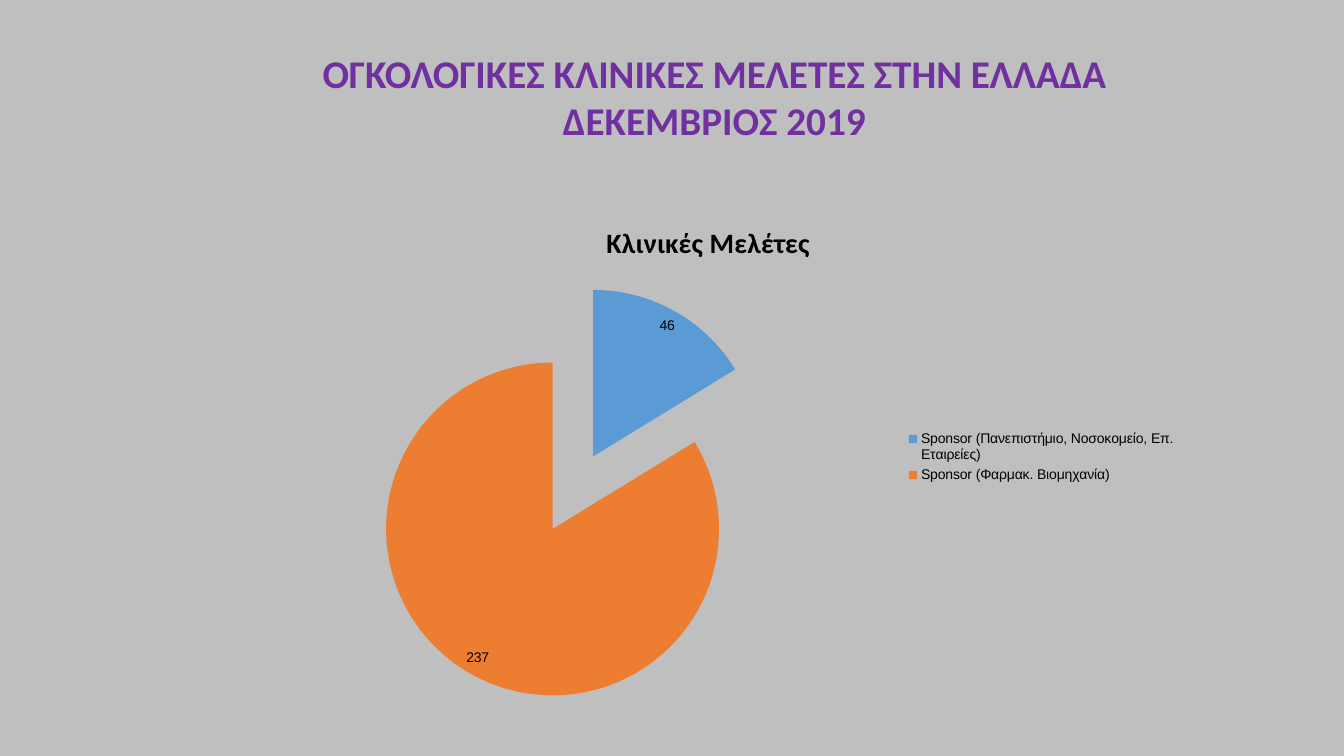
from dataclasses import dataclass

from lxml import etree
from pptx import Presentation
from pptx.chart.data import CategoryChartData
from pptx.dml.color import RGBColor
from pptx.enum import chart as chart_enum, text
from pptx.oxml import ns
from pptx.util import Inches, Pt


@dataclass(frozen=True)
class Theme:
    background: str = "BFBFBF"
    heading: str = "7030A0"
    ink: str = "000000"
    heading_font: str = "Calibri"
    chart_font: str = "Arial"
    heading_size: int = 28
    chart_title_size: int = 20
    label_size: int = 10


@dataclass(frozen=True)
class Sponsor:
    name: str
    studies: int
    color: str


@dataclass(frozen=True)
class Area:
    """A part of the chart, in fractions of the chart's size."""
    x: float
    y: float
    w: float | None = None
    h: float | None = None


THEME = Theme()
HEADING = ("ΟΓΚΟΛΟΓΙΚΕΣ ΚΛΙΝΙΚΕΣ ΜΕΛΕΤΕΣ ΣΤΗΝ ΕΛΛΑΔΑ", "ΔΕΚΕΜΒΡΙΟΣ 2019")
CHART_TITLE = "Κλινικές Μελέτες"
EXPLOSION = 25
SPONSORS = (
    Sponsor("Sponsor (Πανεπιστήμιο, Νοσοκομείο, Επ. Εταιρείες)", 46, "5B9BD5"),
    Sponsor("Sponsor (Φαρμακ. Βιομηχανία)", 237, "ED7D31"),
)


def format_font(font, name: str, size: int, color: str, bold: bool = False) -> None:
    for key, value in {"name": name, "size": Pt(size), "bold": bold}.items():
        setattr(font, key, value)
    font.color.rgb = RGBColor.from_string(color)


def place_part(part, area: Area, index: int, inner: bool = False) -> None:
    """Give a chart part a manual layout as its child at the index."""
    for old in part.findall(ns.qn("c:layout")):
        part.remove(old)
    layout = etree.Element(ns.qn("c:layout"))
    manual = etree.SubElement(layout, ns.qn("c:manualLayout"))
    settings = {"layoutTarget": "inner"} if inner else {}
    settings |= {"xMode": "edge", "yMode": "edge", "x": area.x, "y": area.y}
    settings |= {"w": area.w, "h": area.h}
    for tag, value in settings.items():
        if value is not None:
            etree.SubElement(manual, ns.qn(f"c:{tag}")).set("val", str(value))
    part.insert(index, layout)


def add_heading(page) -> None:
    box = page.shapes.title
    place = {"left": 3.1, "top": 0.44, "width": 7.97, "height": 1.03}
    for key, value in place.items():
        setattr(box, key, Inches(value))
    frame = box.text_frame
    frame.text = "\n".join(HEADING)
    frame_format = {
        "margin_left": 0, "margin_right": 0, "word_wrap": True,
        "auto_size": text.MSO_AUTO_SIZE.NONE,
        "vertical_anchor": text.MSO_ANCHOR.TOP,
    }
    for key, value in frame_format.items():
        setattr(frame, key, value)
    for para in frame.paragraphs:
        para.alignment = text.PP_ALIGN.CENTER
        para.space_before = Pt(0)
        para.line_spacing = 1.0
        for span in para.runs:
            format_font(span.font, THEME.heading_font, THEME.heading_size,
                        THEME.heading, bold=True)


def add_studies_pie(page) -> None:
    data = CategoryChartData()
    data.categories = [sponsor.name for sponsor in SPONSORS]
    data.add_series("Series 1", [sponsor.studies for sponsor in SPONSORS])
    pie = page.shapes.add_chart(
        chart_enum.XL_CHART_TYPE.PIE, Inches(2.4), Inches(2.01),
        Inches(9.38), Inches(5.05), data).chart
    format_font(pie.font, THEME.chart_font, THEME.label_size, THEME.ink)

    title = pie.chart_title.text_frame
    title.text = CHART_TITLE
    format_font(title.paragraphs[0].runs[0].font, THEME.heading_font,
                THEME.chart_title_size, THEME.ink, bold=True)
    pie.has_legend = True
    pie.legend.position = chart_enum.XL_LEGEND_POSITION.RIGHT
    pie.legend.include_in_layout = False

    plot = pie.plots[0]
    plot.vary_by_categories = True
    plot.has_data_labels = True
    labels = plot.data_labels
    labels.show_value = True
    labels.show_percentage = False
    labels.position = chart_enum.XL_LABEL_POSITION.BEST_FIT
    for index, sponsor in enumerate(SPONSORS):
        fill = plot.series[0].points[index].format.fill
        fill.solid()
        fill.fore_color.rgb = RGBColor.from_string(sponsor.color)

    explosion = etree.Element(ns.qn("c:explosion"), val=str(EXPLOSION))
    pie.element.xpath(".//c:dPt")[0].addprevious(explosion)
    root = pie.element.find(ns.qn("c:chart"))
    place_part(root.find(ns.qn("c:title")), Area(0.38, 0.03), 1)
    place_part(root.find(ns.qn("c:plotArea")), Area(0.13, 0.16, 0.44, 0.82), 0, inner=True)
    place_part(root.find(ns.qn("c:legend")), Area(0.7, 0.44, 0.29, 0.12), 1)


def main() -> None:
    deck = Presentation()
    deck.slide_width, deck.slide_height = Inches(13.33), Inches(7.5)
    page = deck.slides.add_slide(deck.slide_layouts.get_by_name("Title Only"))
    page.background.fill.solid()
    page.background.fill.fore_color.rgb = RGBColor.from_string(THEME.background)
    add_studies_pie(page)
    add_heading(page)
    deck.save("out.pptx")


if __name__ == "__main__":
    main()
